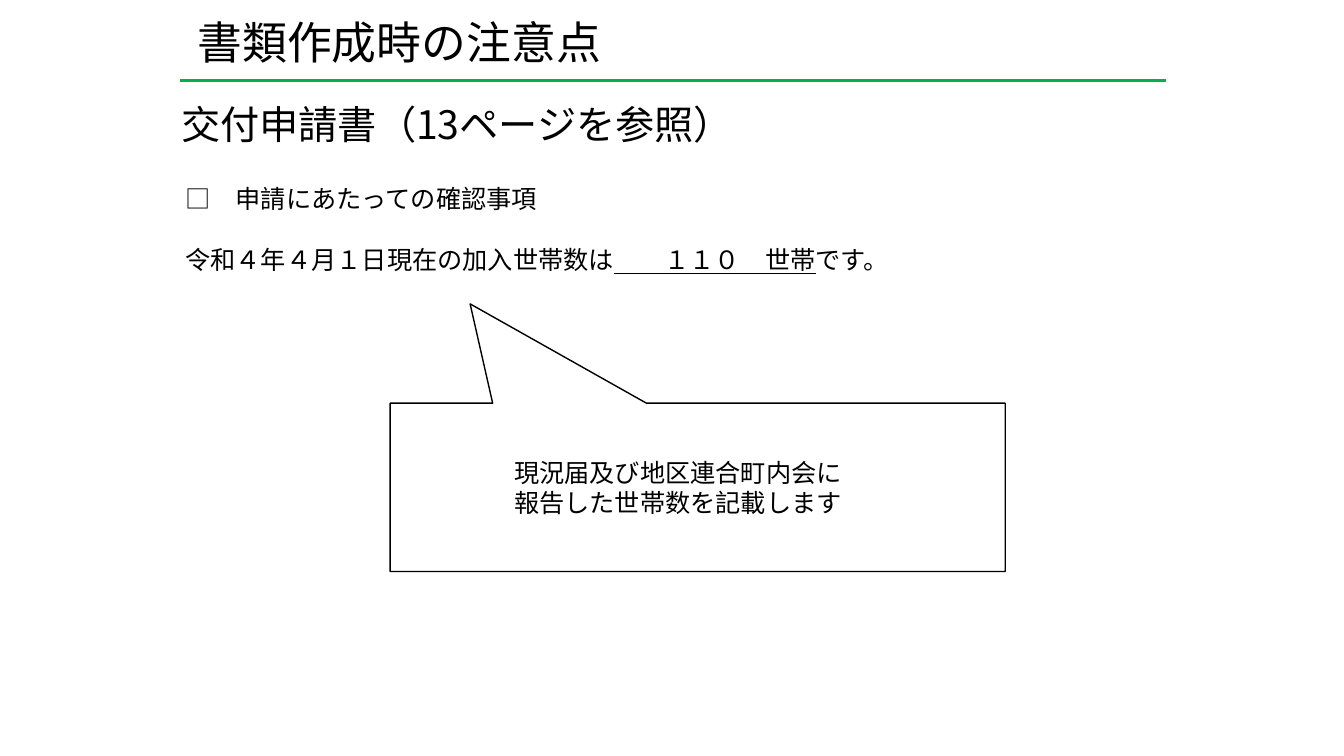
from lxml import etree
from pptx import Presentation
from pptx.dml.color import RGBColor
from pptx.enum.shapes import MSO_CONNECTOR, MSO_SHAPE
from pptx.enum.text import MSO_AUTO_SIZE
from pptx.oxml.ns import qn
from pptx.util import Inches, Pt

STRAIGHT = MSO_CONNECTOR.STRAIGHT
CALLOUT = MSO_SHAPE.RECTANGULAR_CALLOUT
GROW = MSO_AUTO_SIZE.SHAPE_TO_FIT_TEXT

THEME = {
    "font": "Noto Sans CJK JP",
    "text": RGBColor(0, 0, 0),
    "rule": RGBColor(0x00, 0xB0, 0x50),
    "title": 32,
    "heading": 28,
    "body": 18,
    "leading": 1.21,
}

# Each text: box, size, gap between paragraphs in lines, paragraphs of (text, underlined) runs
TEXTS = [
    ((1.86, 0.09, 9.81, 0.64), "title", 0, [[("書類作成時の注意点", False)]]),
    ((1.7, 0.94, 9.54, 0.57), "heading", 0, [[("交付申請書（13ページを参照）", False)]]),
    ((1.74, 1.77, 10.05, 1.01), "body", 1, [
        [("□　申請にあたっての確認事項", False)],
        [("令和４年４月１日現在の加入世帯数は", False),
         ("　　１１０　世帯", True),
         ("です。", False)],
    ]),
    ((5, 4.48, 6.67, 0.71), "body", 0, [
        [("現況届及び地区連合町内会に", False)],
        [("報告した世帯数を記載します", False)],
    ]),
]
RULE = (1.79, 0.8, 11.56, 0.8)
CALLOUT_BOX = (3.87, 4, 6.1, 1.67)
CALLOUT_TIP = (-0.37, -1.09)


def inches(values):
    return [Inches(v) for v in values]


def add_rule(slide):
    line = slide.shapes.add_connector(STRAIGHT, *inches(RULE))
    line.line.color.rgb = THEME["rule"]
    line.line.width = Pt(2.25)
    etree.SubElement(line._element.spPr, qn("a:effectLst"))


def add_callout(slide):
    s = slide.shapes.add_shape(CALLOUT, *inches(CALLOUT_BOX))
    s.shadow.inherit = False
    s.fill.background()
    s.line.color.rgb = THEME["text"]
    s.line.width = Pt(1)
    for i, offset in enumerate(CALLOUT_TIP):
        s.adjustments[i] = offset


def style_paragraph(p, size):
    p.line_spacing = Pt(round(size * THEME["leading"], 1))
    p.font.size = Pt(size)
    p.font.color.rgb = THEME["text"]
    p.font.name = THEME["font"]
    ea = etree.SubElement(p.font._element, qn("a:ea"))
    ea.set("typeface", THEME["font"])


def add_text(slide, box, role, gap, paragraphs):
    size = THEME[role]
    tf = slide.shapes.add_textbox(*inches(box)).text_frame
    tf.word_wrap = True
    tf.auto_size = GROW
    for i, runs in enumerate(paragraphs):
        p = tf.add_paragraph() if i else tf.paragraphs[0]
        style_paragraph(p, size)
        if i:
            p.space_before = Pt(round(gap * size * THEME["leading"], 1))
        for text, underlined in runs:
            r = p.add_run()
            r.text = text
            if underlined:
                r.font.underline = True


def main():
    prs = Presentation()
    prs.slide_width, prs.slide_height = inches((13.33, 7.5))
    slide = prs.slides.add_slide(prs.slide_layouts[6])
    add_rule(slide)
    add_callout(slide)
    for text in TEXTS:
        add_text(slide, *text)
    prs.save("out.pptx")


if __name__ == "__main__":
    main()
